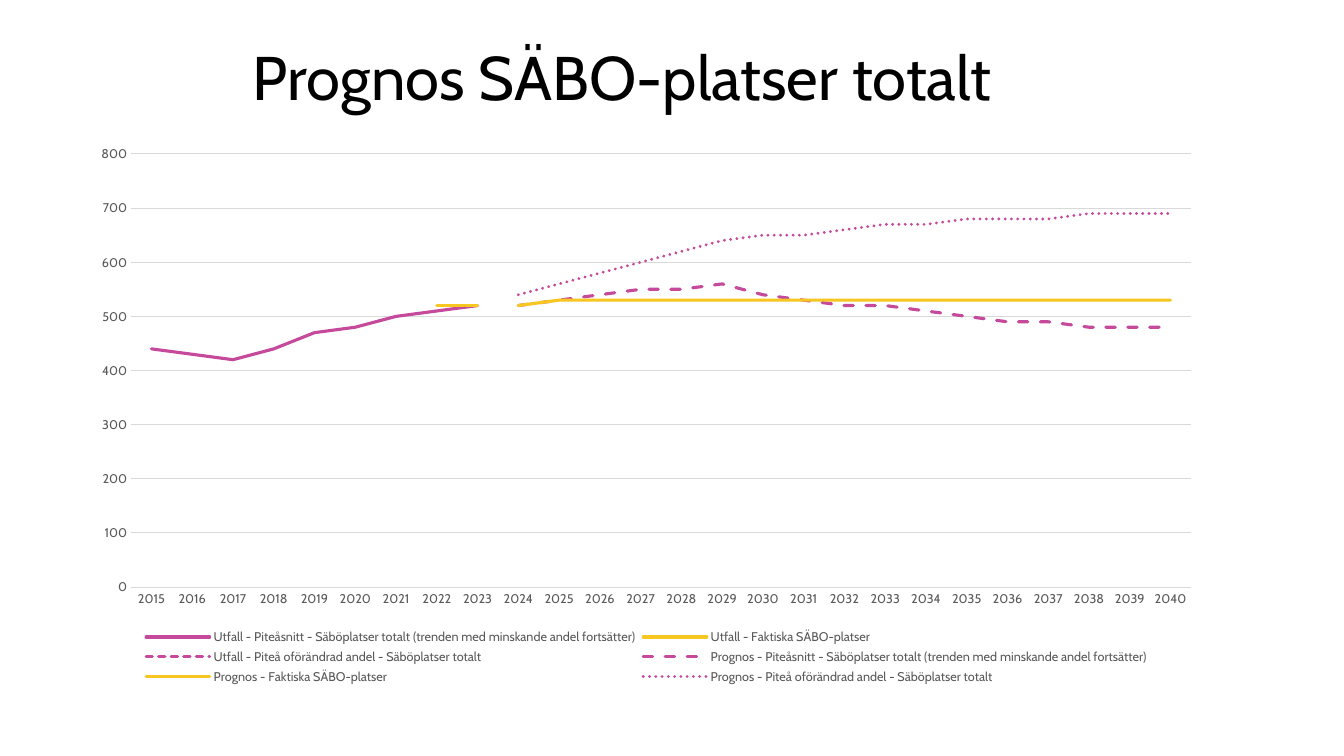
from pptx import Presentation
from pptx.chart.data import CategoryChartData
from pptx.dml.color import RGBColor
from pptx.enum.chart import XL_CHART_TYPE, XL_LEGEND_POSITION, XL_TICK_MARK
from pptx.enum.dml import MSO_LINE
from pptx.enum.text import MSO_ANCHOR
from pptx.util import Pt

FONT = "Cabin"
BLACK = RGBColor(0x00, 0x00, 0x00)
GREY = RGBColor(0x59, 0x59, 0x59)
LIGHT_GREY = RGBColor(0xD9, 0xD9, 0xD9)
PINK = RGBColor(0xC6, 0x4A, 0x9B)
YELLOW = RGBColor(0xF7, 0xC6, 0x21)

YEARS = range(2015, 2041)
TREND = "Piteåsnitt - Säböplatser totalt (trenden med minskande andel fortsätter)"
ACTUAL = "Faktiska SÄBO-platser"
UNCHANGED = "Piteå oförändrad andel - Säböplatser totalt"

SERIES = [
    ("Utfall - " + TREND, 2015, [440, 430, 420, 440, 470, 480, 500, 510, 520], PINK, None),
    ("Utfall - " + ACTUAL, 2022, [520, 520], YELLOW, None),
    ("Utfall - " + UNCHANGED, 2023, [520], PINK, MSO_LINE.SQUARE_DOT),
    ("Prognos - " + TREND, 2024,
     [520, 530, 540, 550, 550, 560, 540, 530, 520, 520, 510, 500, 490, 490, 480, 480, 480],
     PINK, MSO_LINE.DASH),
    ("Prognos - " + ACTUAL, 2024, [520] + [530] * 16, YELLOW, None),
    ("Prognos - " + UNCHANGED, 2024,
     [540, 560, 580, 600, 620, 640, 650, 650, 660, 670, 670, 680, 680, 680, 690, 690, 690],
     PINK, MSO_LINE.ROUND_DOT),
]


def style_font(font, size, color):
    font.name = FONT
    font.size = Pt(size)
    font.color.rgb = color


presentation = Presentation()
presentation.slide_width = Pt(960)
presentation.slide_height = Pt(540)
slide = presentation.slides.add_slide(presentation.slide_layouts[6])

title = slide.shapes.add_textbox(Pt(173.5), Pt(28.8), Pt(720.7), Pt(57.6))
title.text_frame.word_wrap = True
title.text_frame.vertical_anchor = MSO_ANCHOR.MIDDLE
paragraph = title.text_frame.paragraphs[0]
paragraph.text = "Prognos SÄBO-platser totalt"
paragraph.line_spacing = 0.9
style_font(paragraph.font, 44, BLACK)

chart_data = CategoryChartData()
chart_data.categories = [str(year) for year in YEARS]
for name, first_year, values, color, dash in SERIES:
    before = [None] * (first_year - YEARS[0])
    after = [None] * (len(YEARS) - len(before) - len(values))
    chart_data.add_series(name, before + values + after)

chart = slide.shapes.add_chart(
    XL_CHART_TYPE.LINE, Pt(56.2), Pt(96.5), Pt(810.7), Pt(395.3), chart_data
).chart
chart.has_title = False
style_font(chart.font, 10, BLACK)

chart.has_legend = True
chart.legend.position = XL_LEGEND_POSITION.BOTTOM
chart.legend.include_in_layout = False
style_font(chart.legend.font, 9, GREY)

for axis in (chart.category_axis, chart.value_axis):
    axis.major_tick_mark = XL_TICK_MARK.NONE
    axis.minor_tick_mark = XL_TICK_MARK.NONE
    style_font(axis.tick_labels.font, 9, GREY)

value_axis = chart.value_axis
value_axis.minimum_scale = 0
value_axis.maximum_scale = 800
value_axis.major_unit = 100
value_axis.format.line.fill.background()
for line in (chart.category_axis.format.line, value_axis.major_gridlines.format.line):
    line.color.rgb = LIGHT_GREY
    line.width = Pt(0.75)

for series, (name, first_year, values, color, dash) in zip(chart.plots[0].series, SERIES):
    series.smooth = False
    line = series.format.line
    line.color.rgb = color
    line.width = Pt(2.25)
    line.dash_style = dash
    series.format.line._ln.set("cap", "rnd")

presentation.save("out.pptx")
